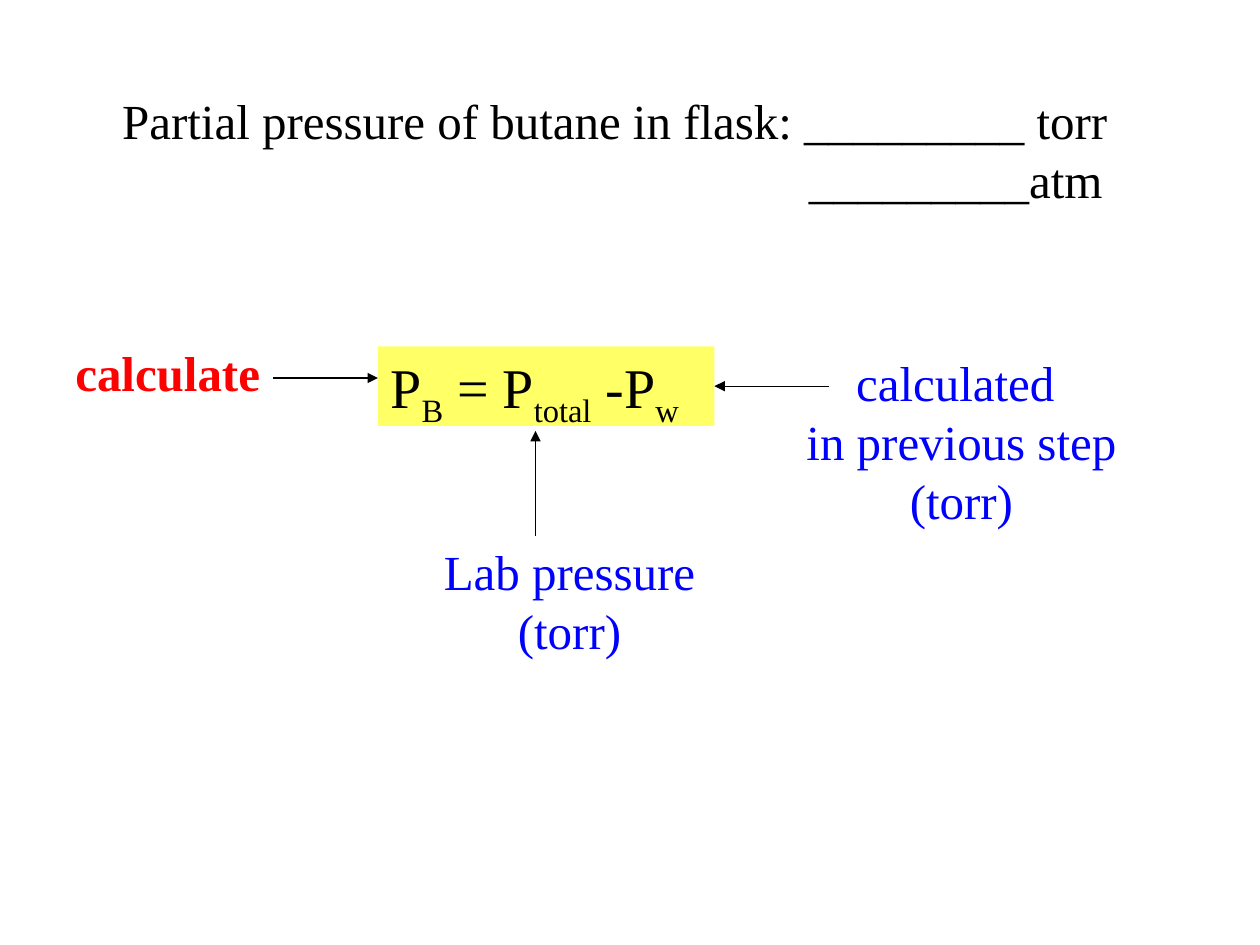
from dataclasses import dataclass

from lxml import etree
from pptx import Presentation
from pptx.dml.color import RGBColor
from pptx.enum import shapes, text
from pptx.oxml import ns
from pptx.util import Inches, Pt


@dataclass(frozen=True)
class Theme:
    font: str = "Times New Roman"
    ink: RGBColor = RGBColor(0x00, 0x00, 0x00)
    known: RGBColor = RGBColor(0x00, 0x00, 0xFF)
    wanted: RGBColor = RGBColor(0xFF, 0x00, 0x00)
    highlight: RGBColor = RGBColor(0xFF, 0xFF, 0x66)
    body_size: int = 28
    equation_size: int = 32
    line_width: float = 0.75


THEME = Theme()


def add_run(paragraph, wording, size=THEME.body_size, color=THEME.ink,
            bold=False, subscript=False):
    run = paragraph.add_run()
    run.text = wording
    run.font.name = THEME.font
    run.font.size = Pt(size)
    run.font.color.rgb = color
    run.font.bold = bold
    if subscript:
        run._r.get_or_add_rPr().set("baseline", "-25000")
    return run


def write_lines(frame, lines, align=text.PP_ALIGN.LEFT, wrap=True, **run_format):
    frame.word_wrap = wrap
    frame.auto_size = text.MSO_AUTO_SIZE.NONE
    frame.vertical_anchor = text.MSO_ANCHOR.TOP
    for index, line in enumerate(lines):
        paragraph = frame.add_paragraph() if index else frame.paragraphs[0]
        paragraph.alignment = align
        add_run(paragraph, line, **run_format)


def place_heading(slide, left, top, width, height):
    heading = slide.shapes.title
    heading.left, heading.top, heading.width, heading.height = left, top, width, height
    write_lines(heading.text_frame, [
        "Partial pressure of butane in flask: _________ torr",
        "_________atm",
    ])
    atm_line = heading.text_frame.paragraphs[1]
    atm_line._p.get_or_add_pPr().set("marL", str(Inches(5.45)))


def place_equation(slide, left, top, width, height):
    equation = slide.shapes.add_shape(
        shapes.MSO_SHAPE.RECTANGLE, left, top, width, height)
    equation.shadow.inherit = False
    equation.fill.solid()
    equation.fill.fore_color.rgb = THEME.highlight
    equation.line.fill.background()
    terms = [("P", "B"), (" = P", "total"), (" -P", "w")]
    write_lines(equation.text_frame, [])
    formula = equation.text_frame.paragraphs[0]
    formula.alignment = text.PP_ALIGN.LEFT
    for symbol, index in terms:
        add_run(formula, symbol, size=THEME.equation_size)
        add_run(formula, index, size=THEME.equation_size, subscript=True)
    return equation


def place_label(slide, left, top, width, height, lines, **line_format):
    label = slide.shapes.add_textbox(left, top, width, height)
    write_lines(label.text_frame, lines, **line_format)


def add_arrow(slide, start, end):
    arrow = slide.shapes.add_connector(shapes.MSO_CONNECTOR.STRAIGHT, *start, *end)
    arrow.line.color.rgb = THEME.ink
    arrow.line.width = Pt(THEME.line_width)
    etree.SubElement(arrow.line._get_or_add_ln(), ns.qn("a:tailEnd"), type="triangle")
    etree.SubElement(arrow._element.spPr, ns.qn("a:effectLst"))
    return arrow


def place_diagram(slide, left, top):
    def at(x, y):
        return left + Inches(x), top + Inches(y)

    def box(x, y, width, height):
        return *at(x, y), Inches(width), Inches(height)

    equation = place_equation(slide, *box(2.5, 0.08, 2.67, 0.63))
    middle = equation.top + equation.height // 2
    right_edge = equation.left + equation.width

    add_arrow(slide, at(3.75, 1.58), at(3.75, 0.75))
    place_label(slide, *box(2.92, 1.58, 2.2, 1.03), ["Lab pressure", "(torr)"],
                align=text.PP_ALIGN.CENTER, wrap=False, color=THEME.known)

    water_arrow = add_arrow(
        slide, (left + Inches(6.08), middle), (right_edge, middle))
    water_arrow.end_connect(equation, 3)
    place_label(slide, *box(5.67, 0.08, 2.92, 1.5),
                ["calculated ", "in previous step (torr)"],
                align=text.PP_ALIGN.CENTER, color=THEME.known)

    add_arrow(slide, at(1.67, 0.33), at(2.5, 0.33))
    place_label(slide, *box(0, 0, 1.67, 0.57), ["calculate"],
                wrap=False, color=THEME.wanted, bold=True)


def main():
    deck = Presentation()
    deck.slide_width, deck.slide_height = Inches(10), Inches(7.5)
    slide = deck.slides.add_slide(deck.slide_layouts.get_by_name("Title Only"))
    place_heading(slide, Inches(0.87), Inches(0.67), Inches(8.26), Inches(1.03))
    place_diagram(slide, Inches(0.5), Inches(2.67))
    deck.save("out.pptx")


if __name__ == "__main__":
    main()
